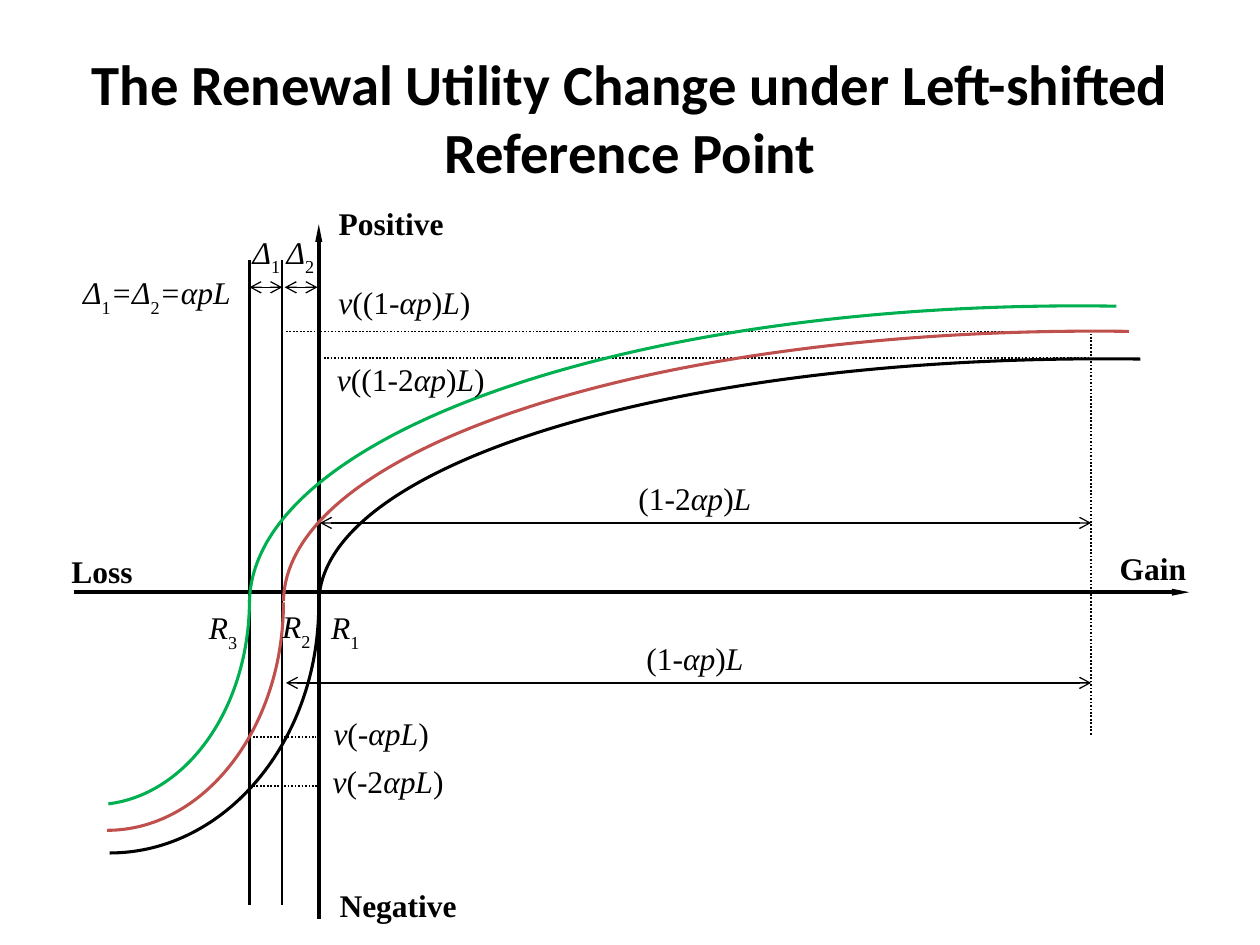
from dataclasses import dataclass
from itertools import groupby

from lxml.etree import SubElement
from pptx import Presentation
from pptx.dml.color import RGBColor
from pptx.enum.dml import MSO_LINE
from pptx.enum.shapes import MSO_CONNECTOR
from pptx.enum.text import MSO_ANCHOR, PP_ALIGN
from pptx.oxml.ns import qn
from pptx.util import Inches, Pt

COLS, ROWS = 100, 75
BLACK, GREEN, RED = "000000", "00B050", "C0504D"
SUBS = {"₁": "1", "₂": "2", "₃": "3"}

deck = Presentation()
deck.slide_width, deck.slide_height = Inches(10), Inches(7.5)
slide = deck.slides.add_slide(deck.slide_layouts[6])
shapes = slide.shapes

# Columns of the three reference points, the furthest gain, and the axis row
R3, R2, R1, END, AXIS = 19.8, 22.4, 25.3, 86.6, 47


@dataclass
class Style:
    width: float
    dash: MSO_LINE | None = None
    head: str = ""
    tail: str = ""
    size: tuple[str, str] = ("med", "med")


MAIN = Style(2, tail="triangle", size=("sm", "lg"))
GUIDE = Style(1.25)
SPAN = Style(0.75, head="arrow", tail="arrow")
DOTS = Style(1, dash=MSO_LINE.ROUND_DOT)


@dataclass
class Line:
    start: tuple[float, float]
    end: tuple[float, float]
    style: Style


@dataclass
class Curve:
    """A cubic curve: start, two control points, end."""
    color: str
    points: list[tuple[float, float]]


@dataclass
class Label:
    text: str
    left: float
    top: float
    width: float
    height: float = 4.7
    bold: bool = False
    align: PP_ALIGN = PP_ALIGN.CENTER


def x(col: float) -> int:
    return round(deck.slide_width * col / COLS)


def y(row: float) -> int:
    return round(deck.slide_height * row / ROWS)


def paint(item, color: str) -> None:
    item.color.rgb = RGBColor.from_string(color)


def draw_line(line: Line) -> None:
    style = line.style
    link = shapes.add_connector(
        MSO_CONNECTOR.STRAIGHT,
        x(line.start[0]), y(line.start[1]), x(line.end[0]), y(line.end[1]))
    paint(link.line, BLACK)
    link.line.width = Pt(style.width)
    if style.dash:
        link.line.dash_style = style.dash
    ln = link.line._get_or_add_ln()
    for tag, kind in (("a:headEnd", style.head), ("a:tailEnd", style.tail)):
        if kind:
            wide, long = style.size
            SubElement(ln, qn(tag), type=kind, w=wide, len=long)
    SubElement(link._element.spPr, qn("a:effectLst"))


def draw_curve(curve: Curve) -> None:
    """Build the control polygon, then turn its three sides into one cubic."""
    first, *rest = [(x(col), y(row)) for col, row in curve.points]
    pen = shapes.build_freeform(*first)
    pen.add_line_segments(rest, close=False)
    shape = pen.convert_to_shape()
    shape.shadow.inherit = False
    shape.fill.background()
    paint(shape.line, curve.color)
    shape.line.width = Pt(1.75)
    sides = list(shape._element.iter(qn("a:lnTo")))
    track = sides[0].getparent()
    cubic = SubElement(track, qn("a:cubicBezTo"))
    for side in sides:
        cubic.append(side[0])
        track.remove(side)


def kind_of(char: str) -> str:
    if char in SUBS:
        return "sub"
    return "italic" if char.isalpha() or char == "=" else "plain"


def add_run(para, text: str, **format):
    run = para.add_run()
    run.text = text
    paint(run.font, BLACK)
    for name, value in format.items():
        setattr(run.font, name, value)
    return run


def draw_label(label: Label) -> None:
    """Bold labels are words; the others are formulas with italic letters."""
    box = shapes.add_textbox(
        x(label.left), y(label.top), x(label.width), y(label.height))
    box.text_frame.word_wrap = False
    para = box.text_frame.paragraphs[0]
    para.alignment = label.align
    base = {"name": "Times New Roman", "size": Pt(18)}
    if label.bold:
        add_run(para, label.text, bold=True, **base)
        return
    for kind, chars in groupby(label.text, kind_of):
        text = "".join(SUBS.get(char, char) for char in chars)
        run = add_run(para, text, italic=kind == "italic", **base)
        if kind == "sub":
            run._r.get_or_add_rPr().set("baseline", "-30000")


def draw_title(text: str) -> None:
    box = shapes.add_textbox(x(5), y(3), x(90), y(12.5))
    frame = box.text_frame
    frame.word_wrap = True
    frame.vertical_anchor = MSO_ANCHOR.MIDDLE
    para = frame.paragraphs[0]
    para.alignment = PP_ALIGN.CENTER
    add_run(para, text, name="Calibri", size=Pt(32.4), bold=True)


LINES = [
    Line((5.9, AXIS), (94.4, AXIS), MAIN),
    Line((R1, 72.9), (R1, 17.8), MAIN),
    *(Line((col, 71.8), (col, 20.6), GUIDE) for col in (R2, R3)),
    Line((R3, 22.8), (R2, 22.8), SPAN),
    Line((R2 + 0.2, 22.8), (R1 - 0.1, 22.8), SPAN),
    Line((R1 + 0.1, 41.5), (END, 41.5), SPAN),
    Line((R2 + 0.3, 54.2), (END, 54.2), SPAN),
    Line((R3, 58.5), (R1 - 0.2, 58.5), DOTS),
    Line((R3, 62.4), (R1, 62.4), DOTS),
    Line((END, 58.3), (END, 26.3), DOTS),
    Line((R1 + 0.4, 28.4), (END, 28.4), DOTS),
    Line((R2 + 0.3, 26.3), (END, 26.3), DOTS),
]

CURVES = [
    Curve(GREEN, [(88.6, 24.3), (50.8, 23.7), (20, 34.3), (R3, 47.8)]),
    Curve(BLACK, [(90.5, 28.5), (54.6, 28), (25.5, 36.6), (R1, 47.8)]),
    Curve(RED, [(89.6, 26.3), (52.7, 25.8), (22.7, 35.4), (22.5, 47.7)]),
    Curve(RED, [(8.5, 65.9), (16.2, 65.9), (22.5, 57.8), (22.5, 47.8)]),
    Curve(BLACK, [(8.7, 67.7), (17.9, 67.7), (R1, 58.8), (R1, 48)]),
    Curve(GREEN, [(8.6, 63.8), (15, 63), (R3, 56), (R3, 47.6)]),
]

LABELS = [
    Label("Positive", 22.7, 15.7, 16.7, bold=True),
    Label("Negative", 25.7, 69.8, 11.8, bold=True),
    Label("Loss", 4.3, 43.3, 7.6, bold=True),
    Label("Gain", 87.7, 43.1, 7.6, bold=True),
    Label("R₂", 21.4, 47.7, 7.6, align=PP_ALIGN.LEFT),
    Label("R₁", 25.3, 47.8, 7.6, align=PP_ALIGN.LEFT),
    Label("R₃", 15.6, 47.8, 7.6, align=PP_ALIGN.LEFT),
    Label("Δ₁", 18.7, 18, 4.9),
    Label("Δ₂", 21.4, 18, 4.9),
    Label("Δ₁=Δ₂=αpL", 5, 21.2, 14.9),
    Label("v((1-αp)L)", 24.9, 22, 14.4),
    Label("v((1-2αp)L)", 25.4, 28.1, 14.4),
    Label("v(-αpL)", 25.4, 56.2, 9.7),
    Label("v(-2αpL)", 25.3, 60, 11),
    Label("(1-2αp)L", 48.1, 37.5, 14.1),
    Label("(1-αp)L", 48.1, 50.2, 14.1),
]

draw_title("The Renewal Utility Change under Left-shifted Reference Point")
for draw, items in ((draw_line, LINES), (draw_curve, CURVES),
                    (draw_label, LABELS)):
    for item in items:
        draw(item)

deck.save("out.pptx")
